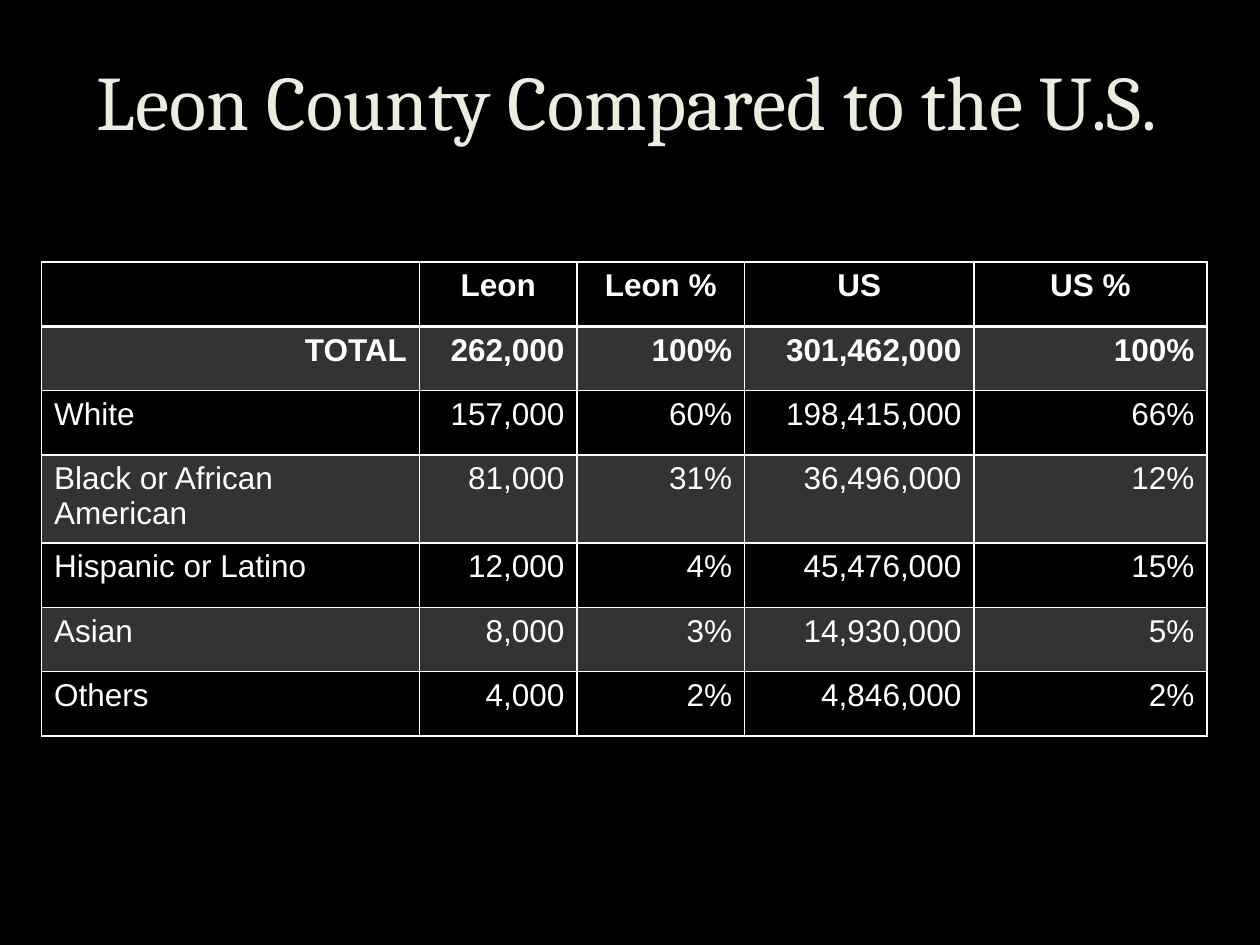
from lxml.etree import SubElement
from pptx import Presentation
from pptx.dml.color import RGBColor as RGB
from pptx.enum.text import MSO_ANCHOR as Anchor, PP_ALIGN as Align
from pptx.oxml.ns import qn
from pptx.util import Inches, Pt

COLORS = {"bg": "000000", "title": "EEECE1", "text": "FFFFFF",
          "line": "FFFFFF", "band": "FFFFFF"}
BAND_ALPHA = 20  # percent
COL_WIDTHS = [3, 1.25, 1.33, 1.82, 1.85]
ROW_HEIGHT, WRAPPED_ROW, WRAPPED_HEIGHT = 0.51, 3, 0.48
ROWS = [
    ["", "Leon", "Leon %", "US", "US %"],
    ["TOTAL", "262,000", "100%", "301,462,000", "100%"],
    ["White", "157,000", "60%", "198,415,000", "66%"],
    ["Black or African American", "81,000", "31%", "36,496,000", "12%"],
    ["Hispanic or Latino", "12,000", "4%", "45,476,000", "15%"],
    ["Asian", "8,000", "3%", "14,930,000", "5%"],
    ["Others", "4,000", "2%", "4,846,000", "2%"],
]


def add_run(p, text, font, size, color, bold=False):
    r = p.add_run()
    r.text = text
    r.font.name, r.font.size, r.font.bold = font, Pt(size), bold
    r.font.color.rgb = RGB.from_string(COLORS[color])


def add_title(slide, text):
    sp = slide.shapes.add_textbox(Inches(0.67), Inches(0.25),
                                  Inches(8.92), Inches(1.08))
    tf = sp.text_frame
    tf.word_wrap = True
    tf.vertical_anchor = Anchor.MIDDLE
    add_run(tf.paragraphs[0], text, "Cambria", 44, "title")


def set_borders(cell, top, bottom):
    tc_pr = cell._tc.get_or_add_tcPr()
    for side, width in zip("LRTB", (1, 1, top, bottom)):
        ln = SubElement(tc_pr, qn(f"a:ln{side}"), w=str(Pt(width)))
        fill = SubElement(ln, qn("a:solidFill"))
        SubElement(fill, qn("a:srgbClr"), val=COLORS["line"])


def set_fill(cell, banded):
    if not banded:
        cell.fill.background()
        return
    cell.fill.solid()
    cell.fill.fore_color.rgb = RGB.from_string(COLORS["band"])
    clr = cell._tc.tcPr.find(f"{qn('a:solidFill')}/{qn('a:srgbClr')}")
    SubElement(clr, qn("a:alpha"), val=str(BAND_ALPHA * 1000))


def cell_align(row, col):
    if row == 0:
        return Align.CENTER
    return Align.LEFT if col == 0 and row > 1 else Align.RIGHT


def add_population_table(slide):
    frame = slide.shapes.add_table(
        len(ROWS), len(COL_WIDTHS), Inches(0.33), Inches(2.08),
        Inches(sum(COL_WIDTHS)), Inches(ROW_HEIGHT * len(ROWS)))
    table = frame.table
    for col, width in zip(table.columns, COL_WIDTHS):
        col.width = Inches(width)
    for i, values in enumerate(ROWS):
        height = WRAPPED_HEIGHT if i == WRAPPED_ROW else ROW_HEIGHT
        table.rows[i].height = Inches(height)
        for j, text in enumerate(values):
            cell = table.cell(i, j)
            # A heavier rule separates the header from the data
            set_borders(cell, 2 if i == 1 else 1, 2 if i == 0 else 1)
            set_fill(cell, banded=i % 2 == 1)
            p = cell.text_frame.paragraphs[0]
            p.alignment = cell_align(i, j)
            if text:
                add_run(p, text, "Arial", 18, "text", bold=i < 2)


def main():
    prs = Presentation()
    prs.slide_width, prs.slide_height = Inches(10), Inches(7.5)
    slide = prs.slides.add_slide(prs.slide_layouts[6])
    # Background
    bg = slide.background.fill
    bg.solid()
    bg.fore_color.rgb = RGB.from_string(COLORS["bg"])
    # Content
    add_title(slide, "Leon County Compared to the U.S.")
    add_population_table(slide)
    prs.save("out.pptx")


if __name__ == "__main__":
    main()
